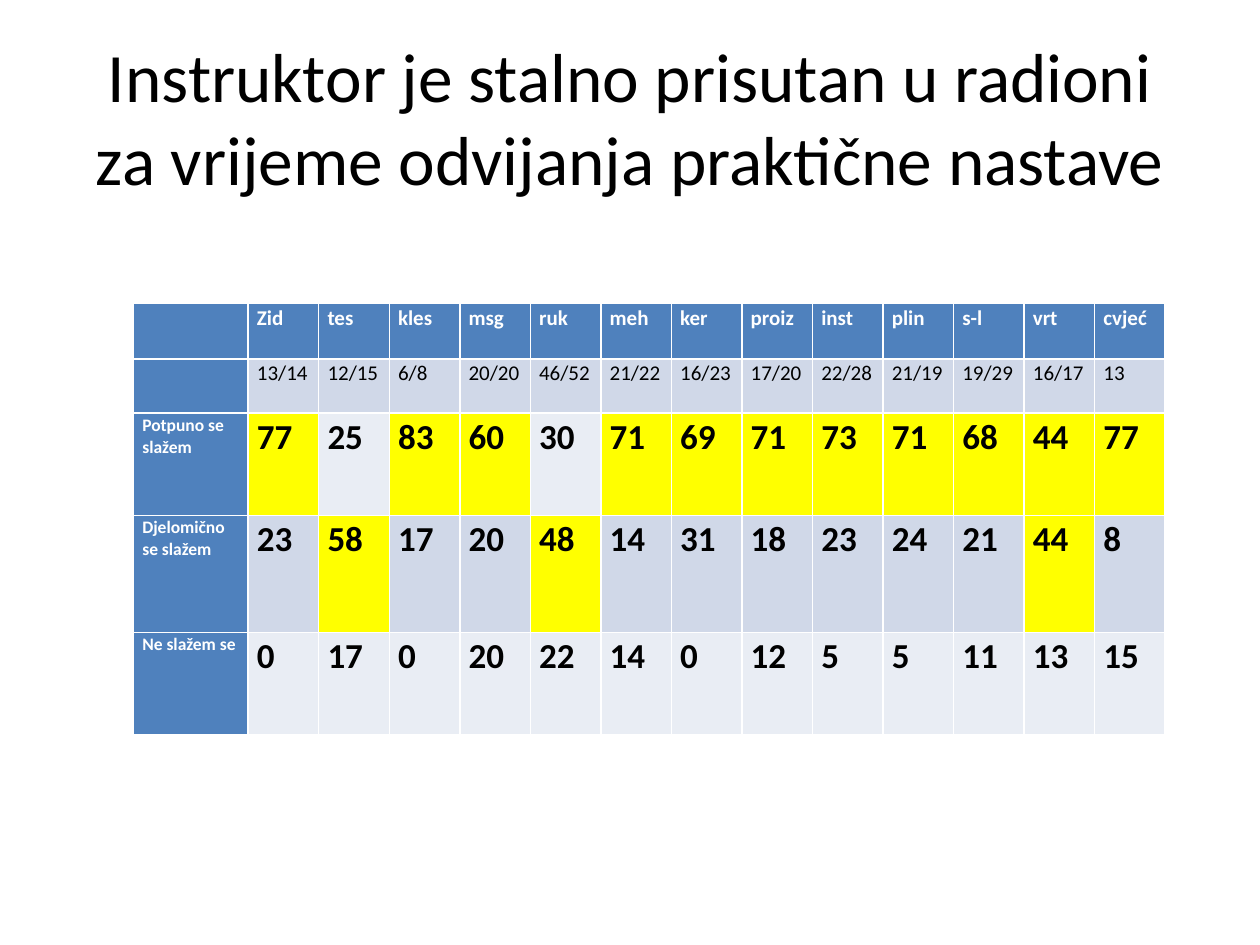
"""Build a slide with a table of survey answers on instructor presence by trade."""
from dataclasses import dataclass

from pptx import Presentation
from pptx.dml.color import RGBColor
from pptx.enum.text import MSO_ANCHOR, PP_ALIGN
from pptx.util import Inches, Pt


@dataclass(frozen=True)
class Theme:
    font: str = "Calibri"
    black: RGBColor = RGBColor(0x00, 0x00, 0x00)
    white: RGBColor = RGBColor(0xFF, 0xFF, 0xFF)
    heading: RGBColor = RGBColor(0x4F, 0x81, 0xBD)
    dark_band: RGBColor = RGBColor(0xD0, 0xD8, 0xE8)
    light_band: RGBColor = RGBColor(0xE9, 0xED, 0xF4)
    highlight: RGBColor = RGBColor(0xFF, 0xFF, 0x00)
    title_size: float = 39.6
    trade_size: int = 12
    answer_size: int = 10
    value_size: int = 20


def format_paragraph(paragraph, size, color, bold):
    paragraph.font.name = theme.font
    paragraph.font.size = Pt(size)
    paragraph.font.color.rgb = color
    paragraph.font.bold = bold


theme = Theme()
trades = ["Zid", "tes", "kles", "msg", "ruk", "meh", "ker", "proiz", "inst", "plin", "s-l", "vrt", "cvjeć"]
counts = ["13/14", "12/15", "6/8", "20/20", "46/52", "21/22", "16/23", "17/20", "22/28", "21/19", "19/29", "16/17", "13"]
answers = {
    "Potpuno se slažem": [77, 25, 83, 60, 30, 71, 69, 71, 73, 71, 68, 44, 77],
    "Djelomično se slažem": [23, 58, 17, 20, 48, 14, 31, 18, 23, 24, 21, 44, 8],
    "Ne slažem se": [0, 17, 0, 20, 22, 14, 0, 12, 5, 5, 11, 13, 15],
}
highest = [max(values) for values in zip(*answers.values())]
rows = [["", *trades], ["", *counts]] + [[answer, *values] for answer, values in answers.items()]
row_heights = [0.44, 0.43, 0.81, 0.93, 0.81]
column_widths = [0.91] + [0.56] * len(trades)

deck = Presentation()
deck.slide_width, deck.slide_height = Inches(10), Inches(7.5)
page = deck.slides.add_slide(deck.slide_layouts[5])

title = page.shapes.title
title.left, title.top, title.width, title.height = Inches(0.5), Inches(0.3), Inches(9), Inches(1.25)
title.text_frame.text = "Instruktor je stalno prisutan u radioni za vrijeme odvijanja praktične nastave"
title.text_frame.vertical_anchor = MSO_ANCHOR.MIDDLE
title.text_frame.paragraphs[0].alignment = PP_ALIGN.CENTER
format_paragraph(title.text_frame.paragraphs[0], theme.title_size, theme.black, False)

table = page.shapes.add_table(
    len(rows), len(column_widths), Inches(1.06), Inches(2.41), Inches(8.19), Inches(3.42)
).table
table.first_col = True
for column, width in zip(table.columns, column_widths):
    column.width = Inches(width)
for row, height in zip(table.rows, row_heights):
    row.height = Inches(height)

for row_index, values in enumerate(rows):
    for column_index, value in enumerate(values):
        is_heading = row_index == 0 or column_index == 0
        is_answer = row_index > 1
        if is_heading:
            fill = theme.heading
        elif is_answer and value == highest[column_index - 1]:
            fill = theme.highlight
        else:
            fill = theme.dark_band if row_index % 2 else theme.light_band

        if not is_answer:
            size = theme.trade_size
        else:
            size = theme.answer_size if is_heading else theme.value_size

        cell = table.cell(row_index, column_index)
        cell.fill.solid()
        cell.fill.fore_color.rgb = fill
        cell.margin_left = cell.margin_right = Inches(0.07)
        cell.margin_top = cell.margin_bottom = 0
        cell.text = str(value)
        para = cell.text_frame.paragraphs[0]
        para.line_spacing = 1.07
        format_paragraph(para, size, theme.white if is_heading else theme.black, is_heading or is_answer)

deck.save("out.pptx")
